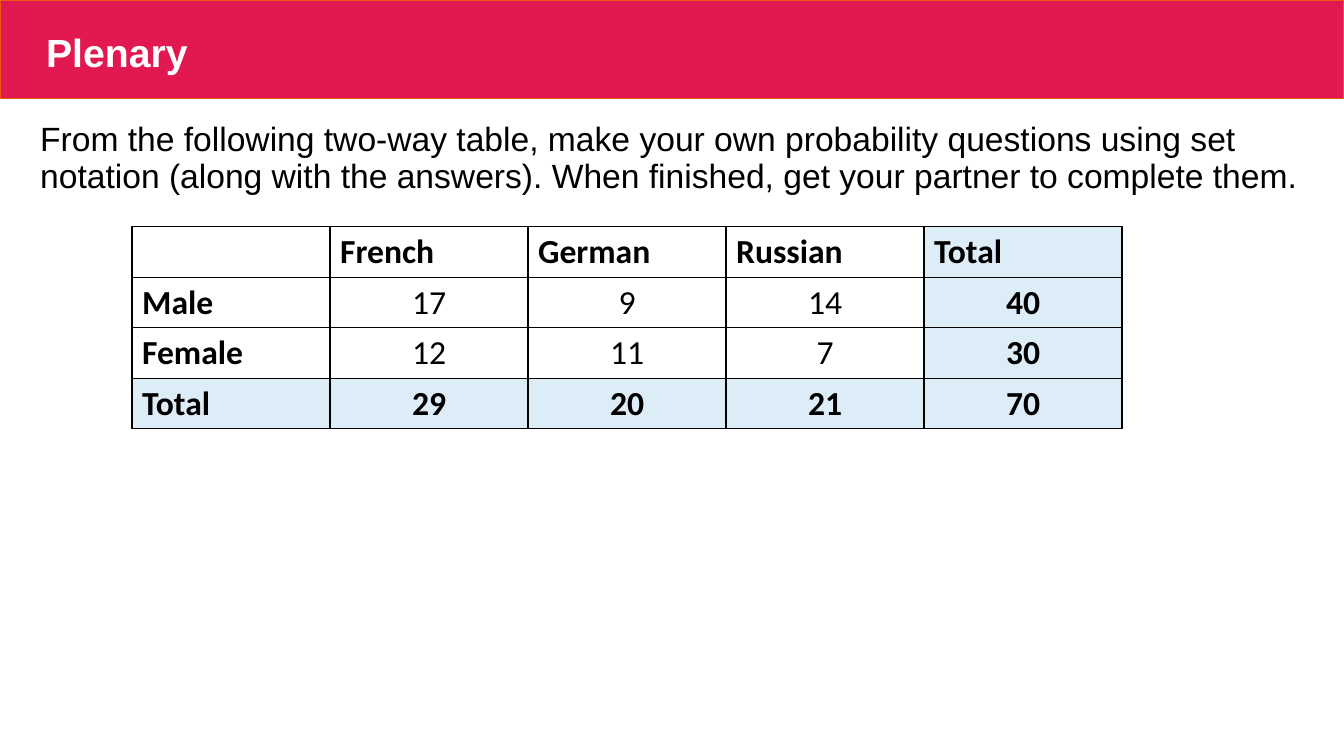
from pptx import Presentation
from pptx.dml.color import RGBColor
from pptx.enum import shapes, text
from pptx.oxml import parse_xml
from pptx.oxml.ns import nsdecls
from pptx.util import Inches, Pt

TITLE = "Plenary"
TASK = ("From the following two-way table, make your own probability questions "
        "using set notation (along with the answers). When finished, get your "
        "partner to complete them.")
ROWS = [
    ("", "French", "German", "Russian", "Total"),
    ("Male", "17", "9", "14", "40"),
    ("Female", "12", "11", "7", "30"),
    ("Total", "29", "20", "21", "70"),
]

PINK = RGBColor(0xE2, 0x19, 0x51)
ORANGE = RGBColor(0xEA, 0x5B, 0x0C)
WHITE = RGBColor(0xFF, 0xFF, 0xFF)
BLACK = RGBColor(0, 0, 0)
PALE = RGBColor(0xDC, 0xED, 0xF8)

WIDTH, HEIGHT = 13.33, 7.5
LEFT, TOP, COL, ROW = 1.31, 2.25, 1.964, 0.5


def style(font, color, size, name="Arial", bold=False):
    font.color.rgb = color
    for key, val in {"size": Pt(size), "name": name, "bold": bold}.items():
        setattr(font, key, val)


def write(slide, words, box, anchor, *look):
    frame = slide.shapes.add_textbox(*map(Inches, box)).text_frame
    frame.word_wrap = True
    frame.vertical_anchor = anchor
    para = frame.paragraphs[0]
    para.text = words
    para.line_spacing = 0.9
    style(para.runs[0].font, *look)


def border(cell):
    props = cell._tc.get_or_add_tcPr()
    for i, side in enumerate(("lnL", "lnR", "lnT", "lnB")):
        props.insert(i, parse_xml(
            f'<a:{side} {nsdecls("a")} w="12700"><a:solidFill>'
            f'<a:srgbClr val="{BLACK}"/></a:solidFill></a:{side}>'))


def fill_cell(cell, words, r, c):
    total = r == len(ROWS) - 1 or c == len(ROWS[0]) - 1
    cell.fill.solid()
    cell.fill.fore_color.rgb = PALE if total else WHITE
    para = cell.text_frame.paragraphs[0]
    para.text = words
    if r and c:
        para.alignment = text.PP_ALIGN.CENTER
    style(para.font, BLACK, 24, "Calibri", total or not (r and c))
    border(cell)


def main():
    deck = Presentation()
    deck.slide_width, deck.slide_height = Inches(WIDTH), Inches(HEIGHT)
    slide = deck.slides.add_slide(deck.slide_layouts[6])

    band = slide.shapes.add_shape(shapes.MSO_SHAPE.RECTANGLE, 0, 0,
                                  Inches(WIDTH), Inches(0.98))
    band.shadow.inherit = False
    band.fill.solid()
    band.fill.fore_color.rgb = PINK
    band.line.color.rgb = ORANGE
    band.line.width = Pt(1)

    anchor = text.MSO_ANCHOR
    write(slide, TITLE, (0.36, 0.19, 12.6, 0.61), anchor.BOTTOM,
          WHITE, 28, "Arial", True)
    write(slide, TASK, (0.3, 1.17, 12.82, 2), anchor.TOP, BLACK, 24)

    rows, cols = len(ROWS), len(ROWS[0])
    grid = slide.shapes.add_table(rows, cols, *map(
        Inches, (LEFT, TOP, COL * cols, ROW * rows))).table
    grid.first_row = grid.horz_banding = False
    for r, row in enumerate(ROWS):
        for c, words in enumerate(row):
            fill_cell(grid.cell(r, c), words, r, c)

    deck.save("out.pptx")


if __name__ == "__main__":
    main()
